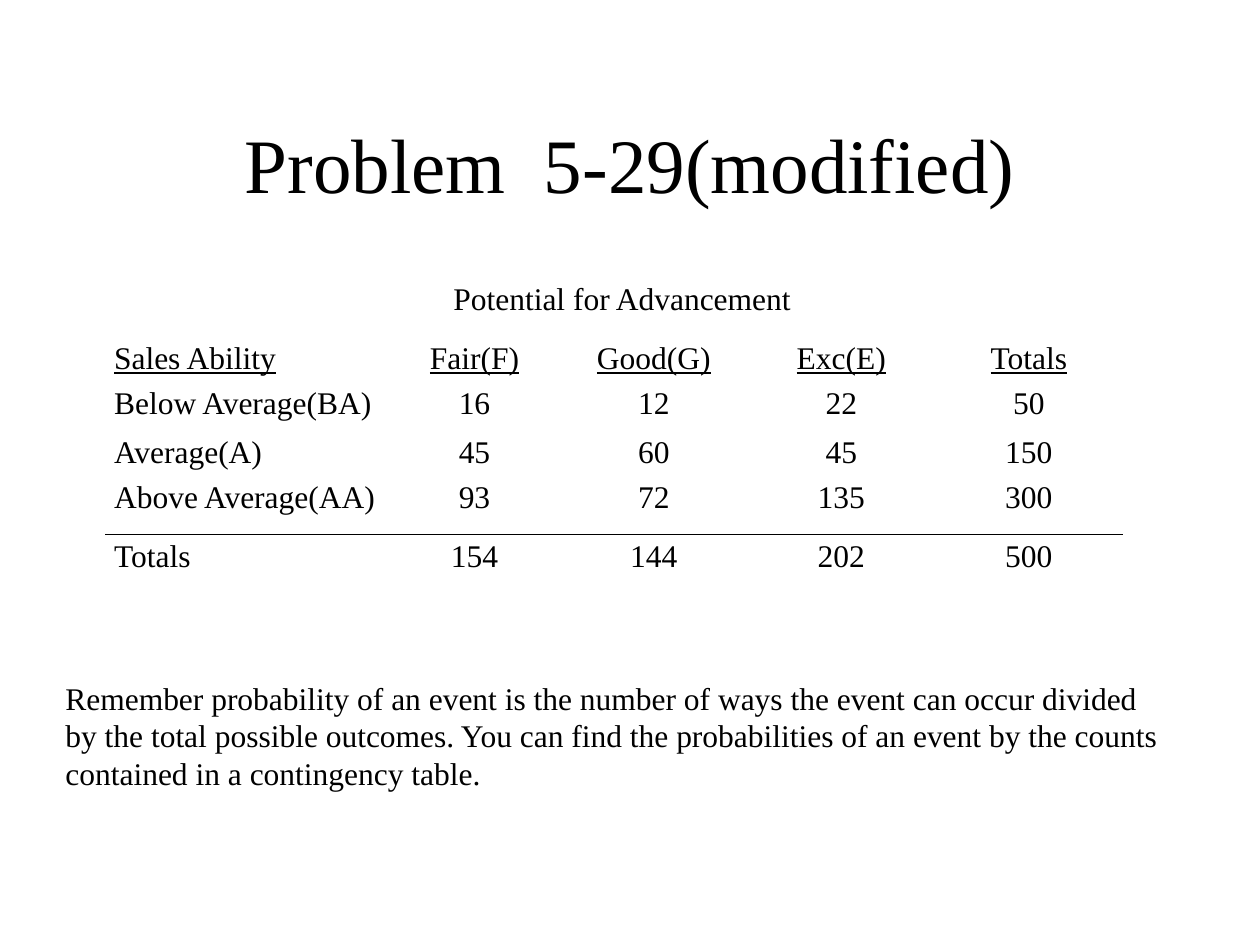
import pptx
import pptx.dml.color
import pptx.enum.text
import pptx.oxml
import pptx.oxml.ns
import pptx.util

Cm = pptx.util.Cm
Pt = pptx.util.Pt
ALIGN = pptx.enum.text.PP_ALIGN
ANCHOR = pptx.enum.text.MSO_ANCHOR
FIT = pptx.enum.text.MSO_AUTO_SIZE
BLACK = pptx.dml.color.RGBColor(0, 0, 0)
FONT = "Times New Roman"
NO_STYLE = "{2D5ABB26-0587-4C30-8999-92F81FD0307C}"

# Content
TITLE = "Problem  5-29(modified)"
HEADING = "Potential for Advancement"
NOTE = ("Remember probability of an event is the number of ways the event can "
        "occur divided by the total possible outcomes. You can find the "
        "probabilities of an event by the counts contained in a contingency table.")
COUNTS = [
    ("Sales Ability", "Fair(F)", "Good(G)", "Exc(E)", "Totals"),
    ("Below Average(BA)", "16", "12", "22", "50"),
    ("Average(A)", "45", "60", "45", "150"),
    ("Above Average(AA)", "93", "72", "135", "300"),
    ("Totals", "154", "144", "202", "500"),
]

# Layout in centimetres
COLUMN_WIDTHS = (5.72, 3.45, 3.78, 3.78, 3.78)
ROW_HEIGHTS = (0.91, 0.99, 0.91, 1.19, 0.91)
TABLE_LEFT, TABLE_TOP = 2.12, 6.77
TEXT_BOXES = [
    (TITLE, (1.9, 1.7, 21.6, 3.18), 44, ALIGN.CENTER,
     {"word_wrap": True, "vertical_anchor": ANCHOR.MIDDLE}),
    (NOTE, (1.07, 13.54, 22.68, 2.57), 18, ALIGN.LEFT,
     {"word_wrap": True, "vertical_anchor": ANCHOR.MIDDLE,
      "auto_size": FIT.SHAPE_TO_FIT_TEXT}),
    (HEADING, (8.89, 5.51, 7.39, 1.02), 18, ALIGN.LEFT,
     {"word_wrap": False, "auto_size": FIT.SHAPE_TO_FIT_TEXT}),
]


def set_values(target, values):
    for name, value in values.items():
        setattr(target, name, value)


def write(frame, text, size, align, underline=False):
    para = frame.paragraphs[0]
    para.alignment = align
    span = para.add_run()
    span.text = text
    set_values(span.font, {"name": FONT, "size": Pt(size), "underline": underline})
    span.font.color.rgb = BLACK
    return para


def add_border(cell, side):
    line = pptx.oxml.parse_xml(
        f'<a:{side} {pptx.oxml.ns.nsdecls("a")} w="{Pt(1)}"><a:solidFill>'
        f'<a:srgbClr val="{BLACK}"/></a:solidFill></a:{side}>')
    cell._tc.get_or_add_tcPr().insert(0, line)


def add_counts(page):
    frame = page.shapes.add_table(
        len(COUNTS), len(COLUMN_WIDTHS), Cm(TABLE_LEFT), Cm(TABLE_TOP),
        Cm(sum(COLUMN_WIDTHS)), Cm(sum(ROW_HEIGHTS)))
    table = frame.table
    set_values(table, {"first_row": False, "horz_banding": False})
    table._tbl.tblPr.find(pptx.oxml.ns.qn("a:tableStyleId")).text = NO_STYLE
    for column, width in zip(table.columns, COLUMN_WIDTHS):
        column.width = Cm(width)
    for row, height in zip(table.rows, ROW_HEIGHTS):
        row.height = Cm(height)

    # The rule lies between the last group and the totals
    rule_sides = {len(COUNTS) - 2: "lnB", len(COUNTS) - 1: "lnT"}
    for r, values in enumerate(COUNTS):
        for c, text in enumerate(values):
            cell = table.cell(r, c)
            cell.fill.background()
            set_values(cell, {"margin_left": Cm(0.18), "margin_right": Cm(0.18),
                              "margin_top": 0, "margin_bottom": 0})
            align = ALIGN.CENTER if c else ALIGN.LEFT
            para = write(cell.text_frame, text, 18, align, underline=r == 0)
            para.line_spacing = 1.15
            if r in rule_sides:
                add_border(cell, rule_sides[r])


def main():
    deck = pptx.Presentation()
    deck.slide_width, deck.slide_height = Cm(25.4), Cm(19.05)
    page = deck.slides.add_slide(deck.slide_layouts[6])
    add_counts(page)
    for text, place, size, align, frame_values in TEXT_BOXES:
        box = page.shapes.add_textbox(*map(Cm, place))
        set_values(box.text_frame, frame_values)
        write(box.text_frame, text, size, align)
    deck.save("out.pptx")


if __name__ == "__main__":
    main()
